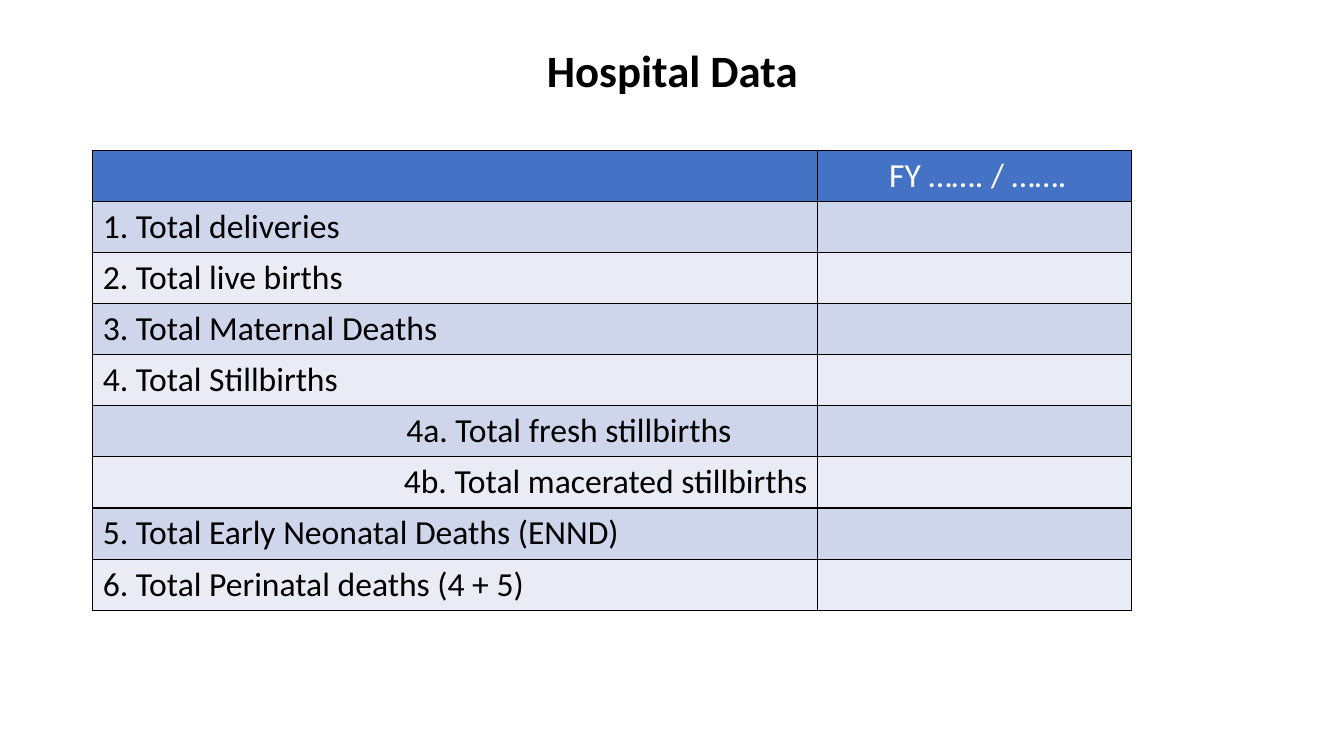
from dataclasses import dataclass, field
from typing import Any

from lxml import etree
from pptx import Presentation
from pptx.dml.color import RGBColor
from pptx.enum.text import MSO_ANCHOR, MSO_AUTO_SIZE, PP_ALIGN
from pptx.oxml.ns import qn
from pptx.util import Inches, Pt

LEFT, CENTER, RIGHT = PP_ALIGN.LEFT, PP_ALIGN.CENTER, PP_ALIGN.RIGHT
MIDDLE, TOP = MSO_ANCHOR.MIDDLE, MSO_ANCHOR.TOP
FIXED = MSO_AUTO_SIZE.NONE
WIDE, HIGH = 13.33, 7.5
GRID = 100
BLACK, WHITE, BLUE = "000000", "FFFFFF", "4472C4"
BANDS = ("CFD5EA", "E9EBF5")
SIDES = ("a:lnL", "a:lnR", "a:lnT", "a:lnB")
COLS = (53.94, 23.33)
ROW = 6.67


@dataclass
class Entry:
    text: str
    align: Any = LEFT
    inset: float = 0.75


@dataclass
class Line:
    label: Entry
    value: Entry = field(default_factory=lambda: Entry(""))


LINES = (
    Line(Entry(""), Entry("FY ……. / …….", CENTER, 1.25)),
    Line(Entry("1. Total deliveries")),
    Line(Entry("2. Total live births")),
    Line(Entry("3. Total Maternal Deaths")),
    Line(Entry("4. Total Stillbirths")),
    Line(Entry("4a. Total fresh stillbirths", LEFT, 23.33)),
    Line(Entry("4b. Total macerated stillbirths", RIGHT)),
    Line(Entry("5. Total Early Neonatal Deaths (ENND)")),
    Line(Entry("6. Total Perinatal deaths (4 + 5)")),
)


def across(cols: float) -> int:
    return Inches(WIDE * cols / GRID)


def down(rows: float) -> int:
    return Inches(HIGH * rows / GRID)


def color(code: str) -> RGBColor:
    return RGBColor.from_string(code)


def apply(target: Any, values: dict[str, Any]) -> None:
    for name, value in values.items():
        setattr(target, name, value)


def style(para: Any, size: int, ink: str, bold: bool) -> None:
    apply(para.font, {"name": "Calibri", "size": Pt(size), "bold": bold})
    para.font.color.rgb = color(ink)


def border(cell: Any) -> None:
    props = cell._tc.get_or_add_tcPr()
    for spot, side in enumerate(SIDES):
        line = etree.Element(qn(side), w=str(Pt(1)))
        fill = etree.SubElement(line, qn("a:solidFill"))
        etree.SubElement(fill, qn("a:srgbClr"), val=BLACK)
        props.insert(spot, line)


def draw_cell(cell: Any, entry: Entry, fill: str, ink: str) -> None:
    apply(cell, {"text": entry.text, "margin_left": across(entry.inset),
                 "vertical_anchor": TOP})
    para = cell.text_frame.paragraphs[0]
    para.alignment = entry.align
    style(para, 24, ink, False)
    cell.fill.solid()
    cell.fill.fore_color.rgb = color(fill)
    border(cell)


def draw_title(slide: Any) -> None:
    title = slide.shapes.title
    apply(title, {"left": across(6.9), "top": down(5.33),
                  "width": across(86.27), "height": down(8.53)})
    apply(title.text_frame, {"text": "Hospital Data", "auto_size": FIXED,
                             "vertical_anchor": MIDDLE})
    para = title.text_frame.paragraphs[0]
    apply(para, {"alignment": CENTER, "line_spacing": 0.9})
    style(para, 32, BLACK, True)


def draw_table(slide: Any) -> None:
    table = slide.shapes.add_table(
        len(LINES), len(COLS), across(6.9), down(19.87),
        across(sum(COLS)), down(ROW * len(LINES))).table
    for col, width in zip(table.columns, COLS):
        col.width = across(width)
    for row, line in enumerate(LINES):
        fill, ink = (BANDS[(row - 1) % 2], BLACK) if row else (BLUE, WHITE)
        for col, entry in enumerate((line.label, line.value)):
            draw_cell(table.cell(row, col), entry, fill, ink)


def main() -> None:
    deck = Presentation()
    apply(deck, {"slide_width": Inches(WIDE), "slide_height": Inches(HIGH)})
    slide = deck.slides.add_slide(deck.slide_layouts[5])
    draw_title(slide)
    draw_table(slide)
    deck.save("out.pptx")


if __name__ == "__main__":
    main()
